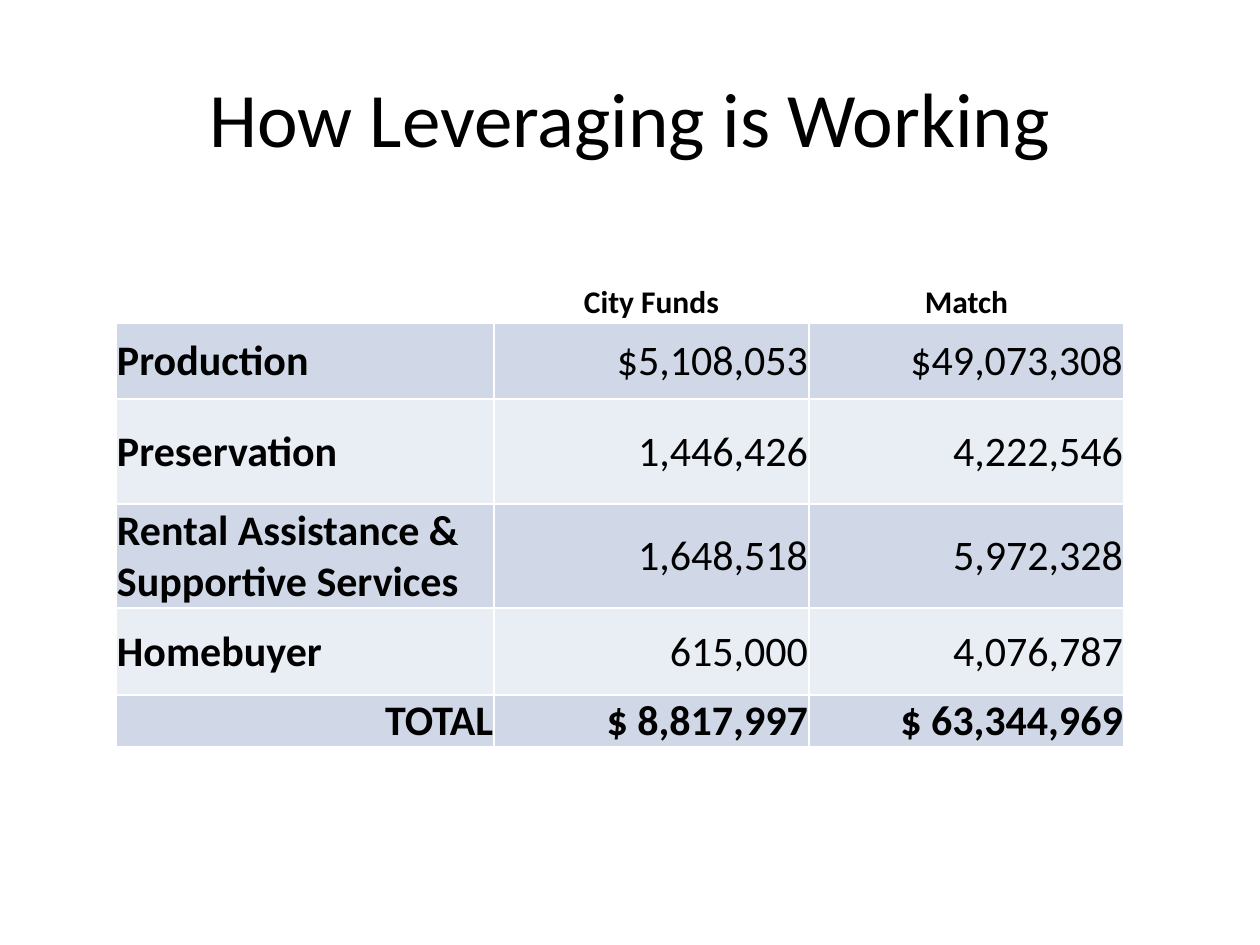
from lxml.etree import SubElement
from pptx import Presentation
from pptx.dml.color import RGBColor
from pptx.enum.text import MSO_ANCHOR as Anchor, PP_ALIGN as Align
from pptx.oxml.ns import qn
from pptx.util import Emu, Pt

PX = 914400 / 126
BLACK = RGBColor(0x00, 0x00, 0x00)
WHITE = RGBColor(0xFF, 0xFF, 0xFF)
BAND_DARK = RGBColor(0xD0, 0xD8, 0xE8)
BAND_LIGHT = RGBColor(0xE9, 0xED, 0xF4)

COLUMN_WIDTHS = [378, 315, 315]
ROW_HEIGHTS = [51, 77, 105, 104, 87, 52]
ROWS = [
    ["", "City Funds", "Match"],
    ["Production", "$5,108,053", "$49,073,308"],
    ["Preservation", "1,446,426", "4,222,546"],
    ["Rental Assistance & Supportive Services", "1,648,518", "5,972,328"],
    ["Homebuyer", "615,000", "4,076,787"],
    ["TOTAL", "$ 8,817,997", "$ 63,344,969"],
]


def px(length):
    return Emu(round(length * PX))


def write(paragraph, text, size, align, bold=False):
    paragraph.text = text
    paragraph.alignment = align
    font_values = {"name": "Calibri", "size": Pt(size), "bold": bold}
    for name, value in font_values.items():
        setattr(paragraph.font, name, value)
    paragraph.font.color.rgb = BLACK


def set_borders(cell, widths):
    """Draw white cell borders; widths maps an edge tag to points."""
    properties = cell._tc.get_or_add_tcPr()
    for position, (edge, width) in enumerate(widths.items()):
        line = SubElement(properties, qn(f"a:{edge}"), w=str(Pt(width)))
        fill = SubElement(line, qn("a:solidFill"))
        SubElement(fill, qn("a:srgbClr"), val=str(WHITE))
        properties.insert(position, line)  # borders precede the fill


def add_title(slide, left, top, width, height):
    box = slide.shapes.add_textbox(px(left), px(top), px(width), px(height))
    box.text_frame.word_wrap = True
    box.text_frame.vertical_anchor = Anchor.MIDDLE
    write(box.text_frame.paragraphs[0], "How Leveraging is Working", 44, Align.CENTER)


def format_cell(cell, text, row, column):
    header, total = row == 0, row == len(ROWS) - 1
    label = column == 0
    cell_values = {
        "margin_left": px(1),
        "margin_right": px(1),
        "margin_top": px(1),
        "margin_bottom": 0,
        "vertical_anchor": Anchor.BOTTOM if header or (total and label) else Anchor.MIDDLE,
    }
    for name, value in cell_values.items():
        setattr(cell, name, value)

    cell.fill.solid()
    band = BAND_DARK if row % 2 else BAND_LIGHT
    cell.fill.fore_color.rgb = WHITE if header else band
    set_borders(cell, {
        "lnL": 1,
        "lnR": 1,
        "lnT": 3 if row == 1 else 1,
        "lnB": 3 if header else 1,
    })

    if header:
        align = Align.CENTER
    else:
        align = Align.LEFT if label and not total else Align.RIGHT
    write(cell.text_frame.paragraphs[0], text, 18 if header else 24, align,
          bold=header or total or label)


def add_funds_table(slide, left, top):
    table = slide.shapes.add_table(
        len(ROWS), len(COLUMN_WIDTHS), px(left), px(top),
        px(sum(COLUMN_WIDTHS)), px(sum(ROW_HEIGHTS)),
    ).table
    for column, width in zip(table.columns, COLUMN_WIDTHS):
        column.width = px(width)
    for row, height in zip(table.rows, ROW_HEIGHTS):
        row.height = px(height)
    for row, texts in enumerate(ROWS):
        for column, text in enumerate(texts):
            format_cell(table.cell(row, column), text, row, column)


def main():
    presentation = Presentation()
    presentation.slide_width = px(1260)
    presentation.slide_height = px(945)
    slide = presentation.slides.add_slide(presentation.slide_layouts[6])

    # Title
    add_title(slide, 63, 38, 1134, 158)
    # City funds and matching funds by programme
    add_funds_table(slide, 116, 271)

    presentation.save("out.pptx")


if __name__ == "__main__":
    main()
